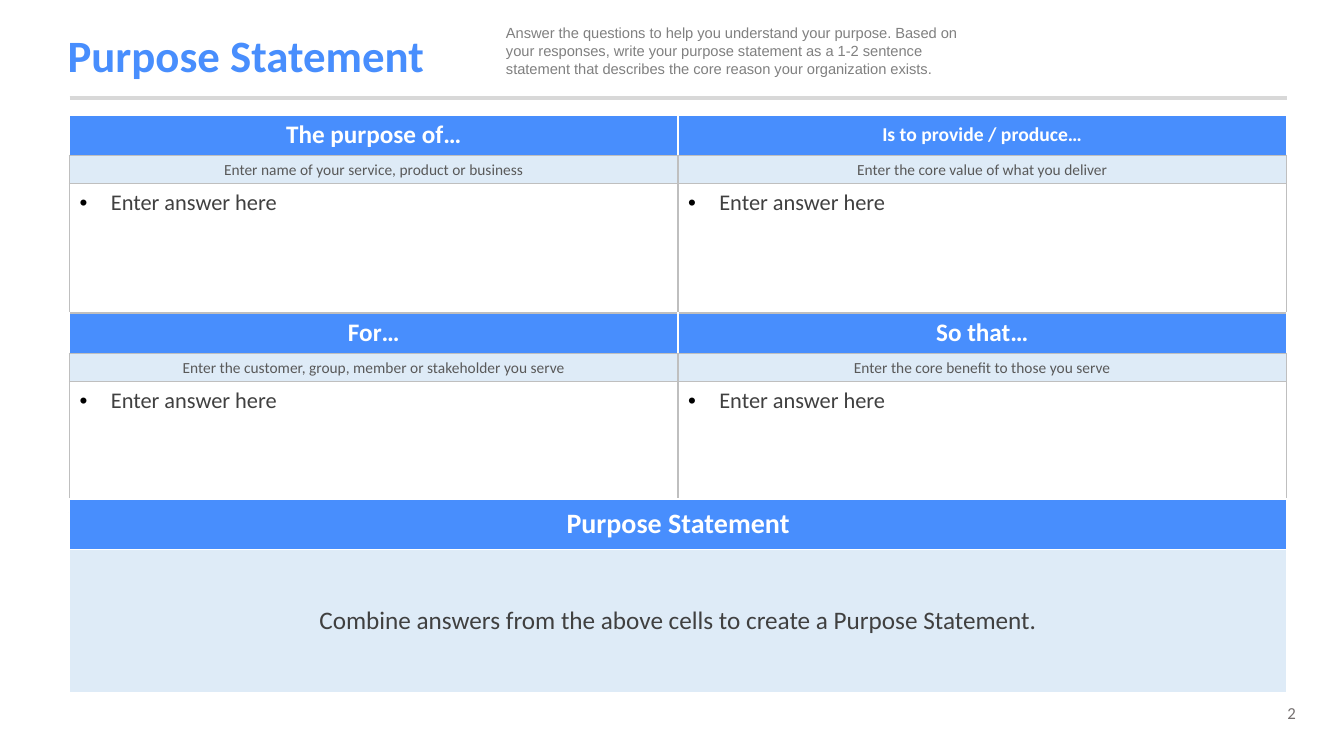
"""Build a purpose statement worksheet slide."""
import dataclasses

import lxml.etree
import pptx
import pptx.dml.color
import pptx.enum.shapes
import pptx.enum.text
import pptx.oxml.ns
import pptx.util

HEADING = "Purpose Statement"
GUIDANCE = (
    "Answer the questions to help you understand your purpose. Based on your "
    "responses, write your purpose statement as a 1-2 sentence statement that "
    "describes the core reason your organization exists."
)
ANSWER = "Enter answer here"
QUESTIONS = [
    ("header", ["The purpose of…", "Is to provide / produce…"]),
    ("hint", ["Enter name of your service, product or business",
              "Enter the core value of what you deliver"]),
    ("answer", [ANSWER, ANSWER]),
    ("header", ["For…", "So that…"]),
    ("hint", ["Enter the customer, group, member or stakeholder you serve",
              "Enter the core benefit to those you serve"]),
    ("answer", [ANSWER, ANSWER]),
]
STATEMENT = [
    ("banner", [HEADING]),
    ("summary", ["Combine answers from the above cells to create a Purpose Statement."]),
]
SMALLER_HEADER = "Is to provide / produce…"
PAGE_NUMBER = "2"

SLIDE_WIDTH, SLIDE_HEIGHT = 13.33, 7.5
GRID_LEFT, GRID_WIDTH = 0.69, 12.07
QUESTIONS_TOP, STATEMENT_TOP = 1.14, 4.95
QUESTION_ROWS = [0.32, 0.28, 1.28, 0.32, 0.28, 1.3]
STATEMENT_ROWS = [0.5, 1.42]
RULE_TOP = 0.97
BULLET_INDENT = 0.31

CENTER = pptx.enum.text.PP_ALIGN.CENTER
LEFT = pptx.enum.text.PP_ALIGN.LEFT
RIGHT = pptx.enum.text.PP_ALIGN.RIGHT
MIDDLE = pptx.enum.text.MSO_ANCHOR.MIDDLE
TOP = pptx.enum.text.MSO_ANCHOR.TOP


@dataclasses.dataclass(frozen=True)
class TextStyle:
    size: float
    color: str
    bold: bool = False
    font: str = "Calibri"
    fill: str = "FFFFFF"


@dataclasses.dataclass(frozen=True)
class Theme:
    title = TextStyle(32, "488EFD", True)
    guidance = TextStyle(10.5, "808080", font="Arial")
    number = TextStyle(12, "757070")
    header = TextStyle(18, "FFFFFF", True, fill="488EFD")
    small_header = TextStyle(14, "FFFFFF", True, fill="488EFD")
    hint = TextStyle(11, "595959", fill="DEEBF7")
    answer = TextStyle(16, "404040")
    banner = TextStyle(20, "FFFFFF", True, fill="488EFD")
    summary = TextStyle(18, "404040", fill="DEEBF7")
    rule = "D8D8D8"
    grid = "BFBFBF"
    divider = "FFFFFF"
    bullet = "000000"


THEME = Theme()


def rgb(color):
    return pptx.dml.color.RGBColor.from_string(color)


def add_xml(parent, tag, **attributes):
    return lxml.etree.SubElement(parent, pptx.oxml.ns.qn(tag), attributes)


def place(shape, *box):
    shape.left, shape.top, shape.width, shape.height = map(pptx.util.Inches, box)


def write(frame, wording, style, align):
    frame.text = wording
    paragraph = frame.paragraphs[0]
    paragraph.alignment = align
    font = paragraph.runs[0].font
    font.name, font.size, font.bold = style.font, pptx.util.Pt(style.size), style.bold
    font.color.rgb = rgb(style.color)
    return paragraph


def add_note(slide, box, wording, style, align):
    note = slide.shapes.add_textbox(*map(pptx.util.Inches, box))
    note.text_frame.word_wrap = True
    write(note.text_frame, wording, style, align)


def add_bullet(paragraph):
    indent = pptx.util.Inches(BULLET_INDENT)
    properties = paragraph._p.get_or_add_pPr()
    properties.set("marL", str(indent))
    properties.set("indent", str(-indent))
    add_xml(add_xml(properties, "a:buClr"), "a:srgbClr", val=THEME.bullet)
    add_xml(properties, "a:buFont", typeface="Arial")
    add_xml(properties, "a:buChar", char="•")


def add_borders(cell, colors):
    properties = cell._tc.get_or_add_tcPr()
    for side, color in zip("LRTB", colors):
        border = add_xml(properties, f"a:ln{side}", w=str(pptx.util.Pt(1)))
        add_xml(add_xml(border, "a:solidFill"), "a:srgbClr", val=color)


def border_colors(kind, row):
    if kind in ("banner", "summary"):
        return [THEME.divider] * 4
    if kind == "header":
        top = THEME.grid if row else THEME.divider
        return [THEME.divider, THEME.divider, top, THEME.grid]
    return [THEME.grid] * 4


def add_grid(slide, top, heights, content):
    columns = len(content[0][1])
    box = (GRID_LEFT, top, GRID_WIDTH, sum(heights))
    table = slide.shapes.add_table(
        len(content), columns, *map(pptx.util.Inches, box)).table
    table.first_row = table.horz_banding = False
    for column in table.columns:
        column.width = pptx.util.Inches(GRID_WIDTH / columns)
    for row, (kind, wordings) in enumerate(content):
        table.rows[row].height = pptx.util.Inches(heights[row])
        for column, wording in enumerate(wordings):
            cell = table.cell(row, column)
            is_answer = kind == "answer"
            style = getattr(THEME, "small_header" if wording == SMALLER_HEADER else kind)
            paragraph = write(cell.text_frame, wording, style, LEFT if is_answer else CENTER)
            cell.vertical_anchor = TOP if is_answer else MIDDLE
            if is_answer:
                add_bullet(paragraph)
            add_borders(cell, border_colors(kind, row))
            cell.fill.solid()
            cell.fill.fore_color.rgb = rgb(style.fill)


def add_rule(slide):
    ends = (GRID_LEFT, RULE_TOP, GRID_LEFT + GRID_WIDTH, RULE_TOP)
    rule = slide.shapes.add_connector(
        pptx.enum.shapes.MSO_CONNECTOR.STRAIGHT, *map(pptx.util.Inches, ends))
    rule.line.color.rgb = rgb(THEME.rule)
    rule.line.width = pptx.util.Pt(3)
    add_xml(rule._element.spPr, "a:effectLst")


def main():
    deck = pptx.Presentation()
    deck.slide_width = pptx.util.Inches(SLIDE_WIDTH)
    deck.slide_height = pptx.util.Inches(SLIDE_HEIGHT)
    slide = deck.slides.add_slide(deck.slide_layouts[5])

    title = slide.shapes.title
    place(title, 0.57, 0.19, 10.94, 0.77)
    title.text_frame.vertical_anchor = MIDDLE
    write(title.text_frame, HEADING, THEME.title, LEFT).line_spacing = 0.9

    add_rule(slide)
    add_note(slide, (4.92, 0.19, 4.71, 0.63), GUIDANCE, THEME.guidance, LEFT)
    add_grid(slide, QUESTIONS_TOP, QUESTION_ROWS, QUESTIONS)
    add_grid(slide, STATEMENT_TOP, STATEMENT_ROWS, STATEMENT)
    add_note(slide, (11.93, 6.92, 1.02, 0.3), PAGE_NUMBER, THEME.number, RIGHT)
    deck.save("out.pptx")


if __name__ == "__main__":
    main()
